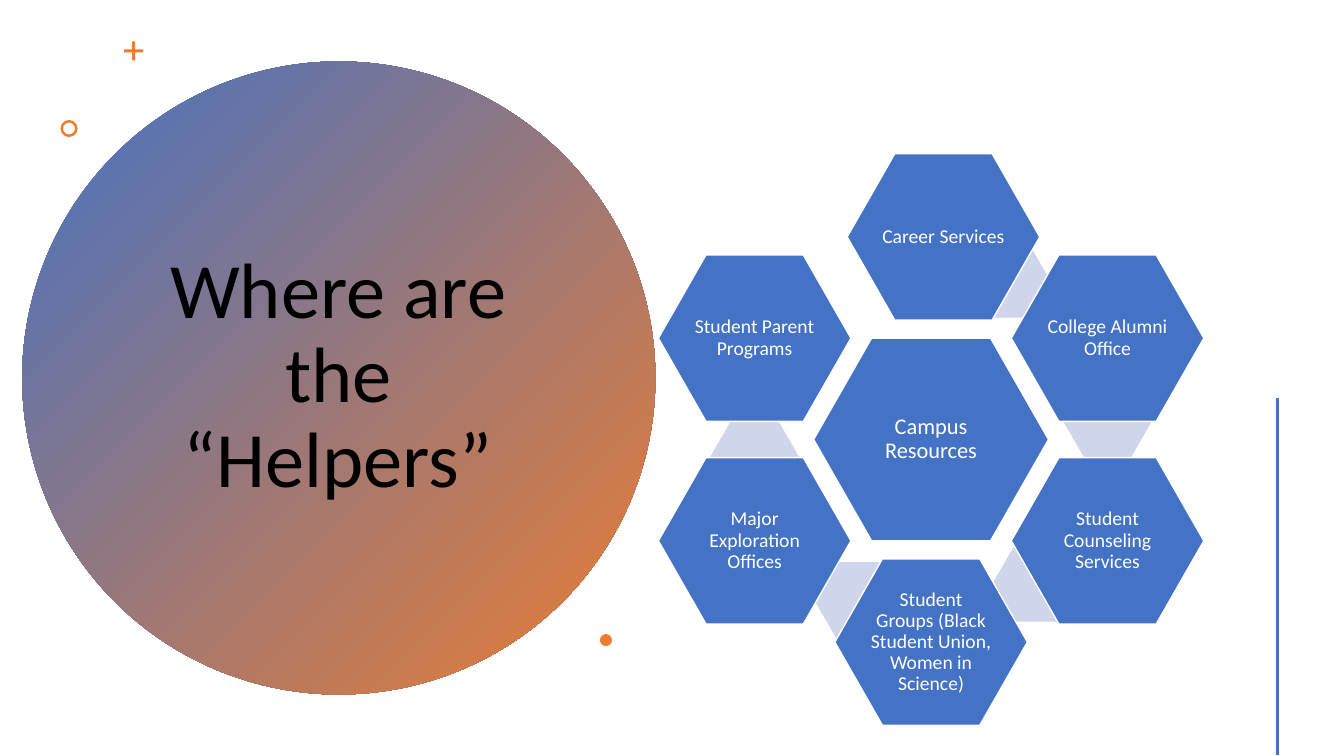
"""Build a slide with a gradient title circle and a ring of campus resource hexagons."""
from dataclasses import dataclass

from lxml import etree
from pptx import Presentation
from pptx.dml.color import RGBColor
from pptx.enum.shapes import MSO_CONNECTOR, MSO_SHAPE
from pptx.enum.text import MSO_ANCHOR, PP_ALIGN
from pptx.oxml.ns import qn
from pptx.util import Inches, Pt

HEXAGON, OVAL = MSO_SHAPE.HEXAGON, MSO_SHAPE.OVAL
CROSS, RING = MSO_SHAPE.CROSS, MSO_SHAPE.DONUT
STRAIGHT = MSO_CONNECTOR.STRAIGHT
MIDDLE, CENTER = MSO_ANCHOR.MIDDLE, PP_ALIGN.CENTER


@dataclass(frozen=True)
class Theme:
    """Colours, font and type sizes of the slide."""
    blue: RGBColor = RGBColor(0x44, 0x72, 0xC4)
    orange: RGBColor = RGBColor(0xED, 0x7D, 0x31)
    pale: RGBColor = RGBColor(0xCF, 0xD5, 0xEA)
    white: RGBColor = RGBColor(0xFF, 0xFF, 0xFF)
    black: RGBColor = RGBColor(0, 0, 0)
    font: str = "Calibri"
    title: int = 56
    hub: int = 16
    resource: int = 14


THEME = Theme()
SLIDE_SIZE = (13.33, 7.5)
TITLE = "Where are the “Helpers”"
HUB = "Campus Resources"

HUB_CENTER = (9.235, 4.36)
HUB_SIZE = (2.33, 2.01)
RESOURCE_SIZE = (1.91, 1.65)
LINK_SIZE = (0.88, 0.76)
COLUMN, ROW = 1.75, 1.005
CAREER_SHIFT = 0.07

RESOURCES = [
    ("Career Services", CAREER_SHIFT, -2),
    ("College Alumni Office", 1, -1),
    ("Student Counseling Services", 1, 1),
    ("Student Groups (Black Student Union, Women in Science)", 0, 2),
    ("Major Exploration Offices", -1, 1),
    ("Student Parent Programs", -1, -1),
]
LINKS = [(0.42, -1.58), (1, -0.18), (0.6, 1.42), (-0.41, 1.59), (-1, 0.17)]
ACCENTS = [
    (CROSS, 1.23, 0.41, 0.19, 0.42),
    (RING, 0.6, 1.19, 0.17, 0.15),
    (OVAL, 5.95, 6.29, 0.12, None),
]


def add_plain_shape(slide, kind, box, fill=None, adjustments=()):
    """Add a preset shape without shadow or outline."""
    shape = slide.shapes.add_shape(kind, *map(Inches, box))
    shape.shadow.inherit = False
    shape.line.fill.background()
    if fill is not None:
        shape.fill.solid()
        shape.fill.fore_color.rgb = fill
    for index, value in enumerate(adjustments):
        shape.adjustments[index] = value
    return shape


def set_text(shape, text, size, color, inset):
    """Write centred, wrapped text into a shape."""
    frame = shape.text_frame
    frame.text = text
    frame.word_wrap = True
    frame.vertical_anchor = MIDDLE
    frame.margin_left = frame.margin_right = Inches(inset)
    frame.margin_top = frame.margin_bottom = Inches(inset)
    paragraph = frame.paragraphs[0]
    paragraph.alignment = CENTER
    paragraph.line_spacing = 0.9
    font = paragraph.runs[0].font
    font.name, font.size, font.color.rgb = THEME.font, Pt(size), color


def add_hexagon(slide, column, row, size, fill, adjustment):
    """Add a hexagon centred on a grid position around the hub."""
    width, height = size
    left = HUB_CENTER[0] + column * COLUMN - width / 2
    top = HUB_CENTER[1] + row * ROW - height / 2
    return add_plain_shape(slide, HEXAGON, (left, top, width, height), fill,
                           (adjustment, 1.155))


def add_resource(slide, text, column, row, size, type_size):
    """Add a labelled blue hexagon with a white outline."""
    hexagon = add_hexagon(slide, column, row, size, THEME.blue, 0.286)
    hexagon.line.color.rgb = THEME.white
    hexagon.line.width = Pt(1)
    set_text(hexagon, text, type_size, THEME.white, 0.02)


def add_title(slide):
    """Add the gradient circle and the title."""
    circle = add_plain_shape(slide, OVAL, (0.22, 0.61, 6.28, 6.28))
    circle.fill.gradient()
    circle.fill.gradient_angle = 315
    for stop, color in zip(circle.fill.gradient_stops, (THEME.blue, THEME.orange)):
        stop.color.rgb = color
    title = slide.shapes.add_textbox(*map(Inches, (1.36, 1.41, 3.99, 4.67)))
    set_text(title, TITLE, THEME.title, THEME.black, 0.1)


def add_accents(slide):
    """Add the small orange marks and the vertical rule."""
    for kind, left, top, size, adjustment in ACCENTS:
        add_plain_shape(slide, kind, (left, top, size, size), THEME.orange,
                        () if adjustment is None else (adjustment,))
    rule = slide.shapes.add_connector(STRAIGHT, *map(Inches, (12.67, 3.95, 12.67, 7.49)))
    rule.line.color.rgb = THEME.blue
    rule.line.width = Pt(2)
    etree.SubElement(rule.line._get_or_add_ln().getparent(), qn("a:effectLst"))


def main():
    """Build and save the presentation."""
    presentation = Presentation()
    presentation.slide_width, presentation.slide_height = map(Inches, SLIDE_SIZE)
    slide = presentation.slides.add_slide(presentation.slide_layouts[6])
    add_title(slide)
    add_accents(slide)
    for column, row in LINKS:
        add_hexagon(slide, column, row, LINK_SIZE, THEME.pale, 0.289)
    add_resource(slide, HUB, 0, 0, HUB_SIZE, THEME.hub)
    for text, column, row in RESOURCES:
        add_resource(slide, text, column, row, RESOURCE_SIZE, THEME.resource)
    presentation.save("out.pptx")


if __name__ == "__main__":
    main()
